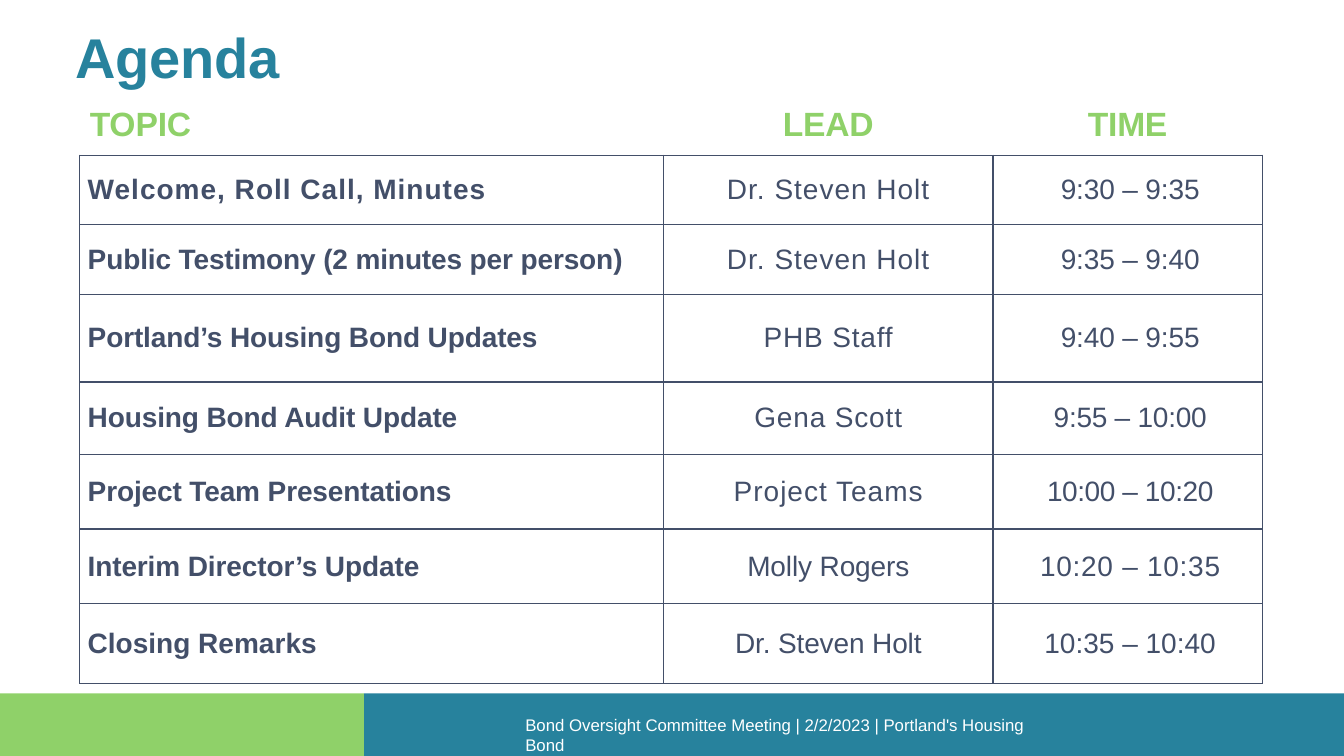
import pptx
import pptx.dml.color
import pptx.enum.shapes
import pptx.enum.text
import pptx.oxml
import pptx.oxml.ns
import pptx.util
from pptx.util import Inches

COLORS = {"teal": "27829D", "green": "8FD169", "slate": "434F69", "white": "FFFFFF"}
FONT = "Arial"
LEFT = pptx.enum.text.PP_ALIGN.LEFT
CENTER = pptx.enum.text.PP_ALIGN.CENTER

COLUMN_WIDTHS = [5.79, 3.27, 2.67]
COLUMN_ALIGNMENTS = [LEFT, CENTER, CENTER]
HEADER_INDENTS = [0.1, 0, 0]
BODY_INDENTS = [0.08, 0, 0.05]
HEADER_HEIGHT = 0.49
HEADERS = [("TOPIC", -0.1), ("LEAD", -0.2), ("TIME", -0.2)]
AGENDA = [
    (0.69, [("Welcome, Roll Call, Minutes", 0.7), ("Dr. Steven Holt", 0.7), ("9:30 – 9:35", -0.1)]),
    (0.69, [("Public Testimony (2 minutes per person)", -0.1), ("Dr. Steven Holt", 0.7), ("9:35 – 9:40", -0.1)]),
    (0.87, [("Portland’s Housing Bond Updates", -0.1), ("PHB Staff", 0.6), ("9:40 – 9:55", -0.1)]),
    (0.72, [("Housing Bond Audit Update", -0.1), ("Gena Scott", 0.6), ("9:55 – 10:00", -0.2)]),
    (0.74, [("Project Team Presentations", -0.1), ("Project Teams", 0.7), ("10:00 – 10:20", -0.3)]),
    (0.74, [("Interim Director’s Update", -0.1), ("Molly Rogers", -0.1), ("10:20 – 10:35", 0.5)]),
    (0.79, [("Closing Remarks", 0), ("Dr. Steven Holt", -0.1), ("10:35 – 10:40", 0)]),
]


def rgb(name):
    """Return the named palette colour."""
    return pptx.dml.color.RGBColor.from_string(COLORS[name])


def write_text(text_frame, text, size, color, bold=False, spacing=0, alignment=LEFT):
    """Put one formatted paragraph in a text frame and return it."""
    text_frame.text = text
    paragraph = text_frame.paragraphs[0]
    paragraph.alignment = alignment
    font = paragraph.runs[0].font
    font.name = FONT
    font.size = pptx.util.Pt(size)
    font.bold = bold
    font.color.rgb = rgb(color)
    paragraph.runs[0]._r.get_or_add_rPr().set("spc", str(round(spacing * 100)))
    return paragraph


def clear_margins(frame):
    """Remove the inner margins of a text frame or table cell."""
    frame.margin_left = frame.margin_top = frame.margin_right = frame.margin_bottom = 0


def set_borders(cell, visible_sides):
    """Draw thin borders on the given sides of a cell and hide the others."""
    properties = cell._tc.get_or_add_tcPr()
    namespace = pptx.oxml.ns.nsdecls("a")
    for side in "LRTB":
        fill = "<a:noFill/>"
        if side in visible_sides:
            fill = f'<a:solidFill><a:srgbClr val="{COLORS["slate"]}"/></a:solidFill>'
        properties.append(pptx.oxml.parse_xml(f'<a:ln{side} {namespace} w="12700">{fill}</a:ln{side}>'))


def add_title(slide, left, top, width, height):
    """Place the slide title in its placeholder."""
    title = slide.shapes.title
    title.left, title.top, title.width, title.height = left, top, width, height
    frame = title.text_frame
    clear_margins(frame)
    frame.word_wrap = False
    frame.vertical_anchor = pptx.enum.text.MSO_ANCHOR.TOP
    paragraph = write_text(frame, "Agenda", 40, "teal", bold=True, spacing=-0.1)
    paragraph.space_before = pptx.util.Pt(0.9)


def add_agenda(slide, left, top, width, height):
    """Add the agenda table with an open header row and bordered items."""
    rows = [(HEADER_HEIGHT, HEADERS)] + AGENDA
    table = slide.shapes.add_table(len(rows), len(HEADERS), left, top, width, height).table
    table.horz_banding = False
    for column, column_width in zip(table.columns, COLUMN_WIDTHS):
        column.width = Inches(column_width)
    for row_index, (row_height, entries) in enumerate(rows):
        table.rows[row_index].height = Inches(row_height)
        is_header = row_index == 0
        indents = HEADER_INDENTS if is_header else BODY_INDENTS
        for column_index, (text, spacing) in enumerate(entries):
            cell = table.cell(row_index, column_index)
            clear_margins(cell)
            cell.margin_left = Inches(indents[column_index])
            set_borders(cell, "B" if is_header else "LRTB")
            cell.fill.background()
            paragraph = write_text(
                cell.text_frame,
                text,
                24 if is_header else 20,
                "green" if is_header else "slate",
                bold=is_header or column_index == 0,
                spacing=spacing,
                alignment=COLUMN_ALIGNMENTS[column_index],
            )
            if is_header:
                cell.vertical_anchor = pptx.enum.text.MSO_ANCHOR.TOP
                paragraph.line_spacing = pptx.util.Pt(26.6)
            else:
                cell.vertical_anchor = pptx.enum.text.MSO_ANCHOR.MIDDLE


def add_footer(slide, left, top, width, height):
    """Add the two-colour footer band and the meeting line."""
    split = Inches(3.61)
    bands = [("teal", left + split, width - split), ("green", left, split)]
    for color, band_left, band_width in bands:
        band = slide.shapes.add_shape(
            pptx.enum.shapes.MSO_SHAPE.RECTANGLE, band_left, top, band_width, height
        )
        band.shadow.inherit = False
        band.fill.solid()
        band.fill.fore_color.rgb = rgb(color)
        band.line.fill.background()
    label = slide.shapes.add_textbox(left + Inches(5.2), top + Inches(0.2), Inches(5.39), Inches(0.23))
    frame = label.text_frame
    clear_margins(frame)
    frame.margin_top = Inches(0.01)
    frame.word_wrap = True
    text = "Bond Oversight Committee Meeting | 2/2/2023 | Portland's Housing Bond"
    paragraph = write_text(frame, text, 12, "white")
    paragraph.space_before = pptx.util.Pt(1)
    frame.margin_left = Inches(0.01)


def main():
    """Build and save the agenda slide."""
    presentation = pptx.Presentation()
    presentation.slide_width = Inches(13.33)
    presentation.slide_height = Inches(7.5)
    slide = presentation.slides.add_slide(presentation.slide_layouts[5])
    add_footer(slide, 0, Inches(6.88), presentation.slide_width, Inches(0.62))
    add_title(slide, Inches(0.75), Inches(0.22), Inches(2.06), Inches(0.69))
    add_agenda(slide, Inches(0.79), Inches(1.05), Inches(11.73), Inches(5.72))
    presentation.save("out.pptx")


if __name__ == "__main__":
    main()
